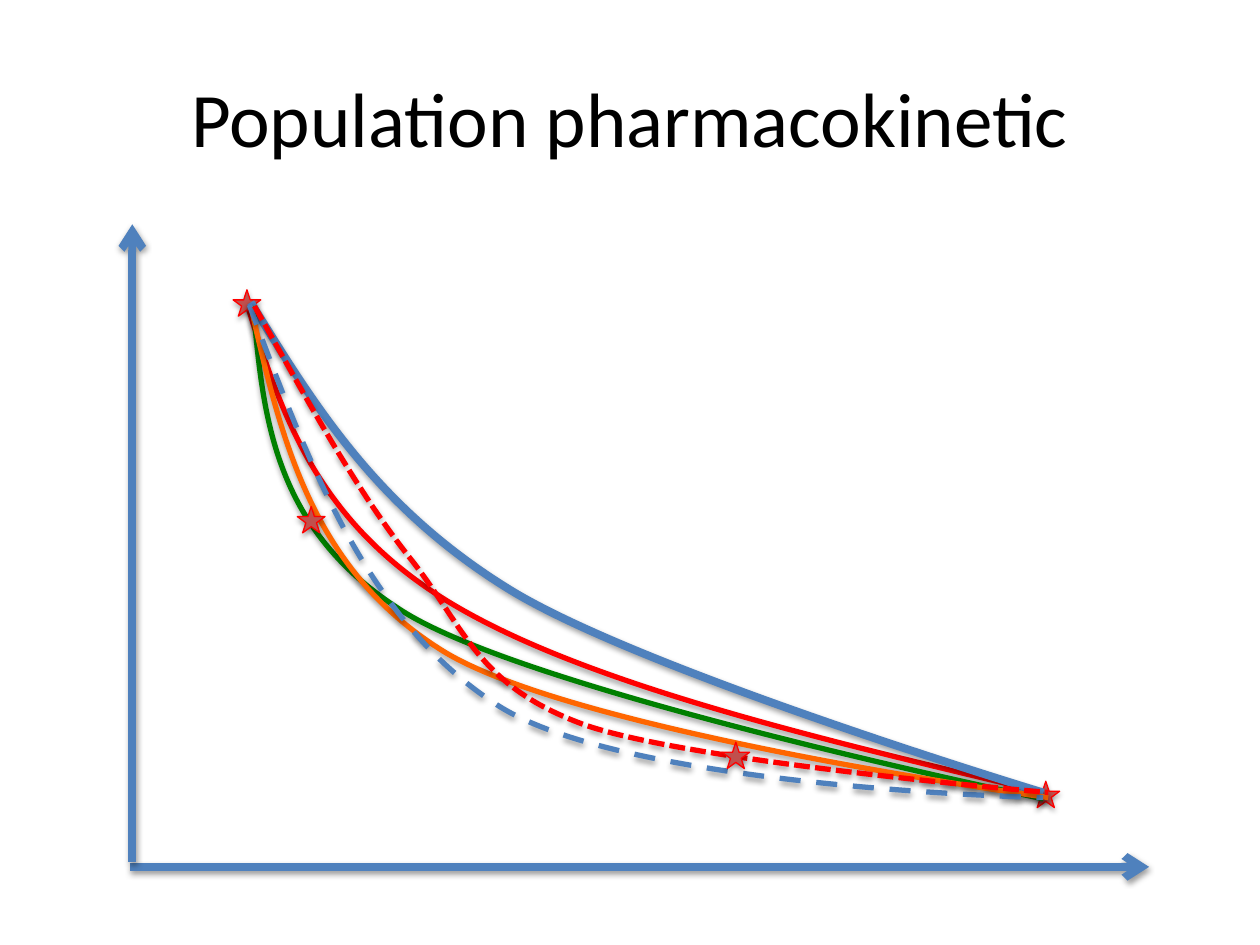
from lxml.etree import SubElement
from pptx import Presentation
from pptx.dml.color import RGBColor
from pptx.enum.dml import MSO_LINE
from pptx.enum.shapes import MSO_CONNECTOR, MSO_SHAPE
from pptx.enum.text import MSO_ANCHOR, PP_ALIGN
from pptx.oxml.ns import qn
from pptx.util import Inches, Pt

BLACK = RGBColor(0x00, 0x00, 0x00)
BLUE = RGBColor(0x4F, 0x81, 0xBD)
RED = RGBColor(0xFF, 0x00, 0x00)
GREEN = RGBColor(0x00, 0x80, 0x00)
ORANGE = RGBColor(0xFF, 0x66, 0x00)
BRICK = RGBColor(0xC0, 0x50, 0x4D)

FIRST_CURVE = (RED, 3, None, [
    (0.92, 0.6), (1.19, 1.47), (1.46, 2.34), (2.52, 2.99),
    (3.58, 3.64), (5.44, 4.08), (7.3, 4.52)])
OTHER_CURVES = [
    (BLUE, 4.5, None, [
        (0.96, 0.62), (1.46, 1.43), (1.95, 2.24), (3, 2.89),
        (4.04, 3.54), (7.25, 4.51), (7.25, 4.51)]),
    (GREEN, 3, None, [
        (0.98, 0.65), (1.06, 1.54), (1.14, 2.43), (2.18, 3.08),
        (3.23, 3.73), (7.25, 4.56), (7.25, 4.56)]),
    (ORANGE, 3, None, [
        (0.96, 0.65), (1.2, 1.7), (1.44, 2.74), (2.49, 3.39),
        (3.55, 4.04), (7.29, 4.55), (7.29, 4.55)]),
    (BLUE, 3, MSO_LINE.DASH, [
        (0.95, 0.64), (1.42, 1.91), (1.89, 3.17), (2.94, 3.83),
        (3.99, 4.48), (7.25, 4.55), (7.25, 4.55)]),
    (RED, 3, MSO_LINE.SQUARE_DOT, [
        (0.99, 0.65), (1.4, 1.38), (1.8, 2.12), (2.24, 2.67),
        (2.67, 3.22), (2.76, 3.66), (3.6, 3.97),
        (4.44, 4.27), (7.29, 4.51), (7.29, 4.51)]),
]
END_STARS = [(0.82, 0.52), (7.16, 4.42)]
SAMPLE_STARS = [(1.33, 2.24), (4.7, 4.11)]


def add_shadow(shape, dist=1.6, alpha=38):
    effects = SubElement(shape._element.spPr, qn("a:effectLst"))
    shadow = SubElement(effects, qn("a:outerShdw"), blurRad=str(Pt(3.1)),
                        dist=str(Pt(dist)), dir="5400000", rotWithShape="0")
    color = SubElement(shadow, qn("a:srgbClr"), val=str(BLACK))
    SubElement(color, qn("a:alpha"), val=str(alpha * 1000))


def set_line(shape, color, width, dash=None):
    shape.line.color.rgb = color
    shape.line.width = Pt(width)
    if dash:
        shape.line.dash_style = dash


def add_title(s, left, top, width, height):
    tf = s.shapes.add_textbox(
        Inches(left), Inches(top), Inches(width), Inches(height)).text_frame
    tf.word_wrap = True
    tf.vertical_anchor = MSO_ANCHOR.MIDDLE
    p = tf.paragraphs[0]
    p.alignment = PP_ALIGN.CENTER
    r = p.add_run()
    r.text = "Population pharmacokinetic"
    r.font.name = "Calibri"
    r.font.size = Pt(44)
    r.font.color.rgb = BLACK


def add_axis(s, x1, y1, x2, y2):
    axis = s.shapes.add_connector(
        MSO_CONNECTOR.STRAIGHT, Inches(x1), Inches(y1), Inches(x2), Inches(y2))
    set_line(axis, BLUE, 4.5)
    SubElement(axis.line._get_or_add_ln(), qn("a:tailEnd"), type="arrow")
    add_shadow(axis)


def add_curve(s, left, top, color, width, dash, points):
    start, *rest = [(Inches(left + x), Inches(top + y)) for x, y in points]
    builder = s.shapes.build_freeform(*start)
    builder.add_line_segments(rest, close=False)
    curve = builder.convert_to_shape()
    segments = list(curve._element.iter(qn("a:lnTo")))
    outline = segments[0].getparent()
    for i in range(0, len(segments), 3):
        bezier = SubElement(outline, qn("a:cubicBezTo"))
        for segment in segments[i:i + 3]:
            bezier.append(segment[0])
            outline.remove(segment)
    curve.fill.background()
    set_line(curve, color, width, dash)
    add_shadow(curve)


def add_stars(s, left, top, places):
    for x, y in places:
        star = s.shapes.add_shape(
            MSO_SHAPE.STAR_5_POINT, Inches(left + x), Inches(top + y),
            Inches(0.22), Inches(0.21))
        star.fill.solid()
        star.fill.fore_color.rgb = BRICK
        set_line(star, RED, 0.75)
        add_shadow(star, 1.8, 35)


def add_plot(s, left, top, width, height):
    right, bottom = left + width, top + height
    add_axis(s, left, bottom, right, bottom)
    add_axis(s, left + 0.02, bottom - 0.04, left + 0.02, top)
    add_curve(s, left, top, *FIRST_CURVE)
    add_stars(s, left, top, END_STARS)
    for curve in OTHER_CURVES:
        add_curve(s, left, top, *curve)
    add_stars(s, left, top, SAMPLE_STARS)


def main():
    prs = Presentation()
    prs.slide_width, prs.slide_height = Inches(10), Inches(7.5)
    s = prs.slides.add_slide(prs.slide_layouts[6])
    add_title(s, 0.5, 0.3, 9, 1.25)
    add_plot(s, 1.03, 1.78, 8.09, 5.1)
    prs.save("out.pptx")


if __name__ == "__main__":
    main()
